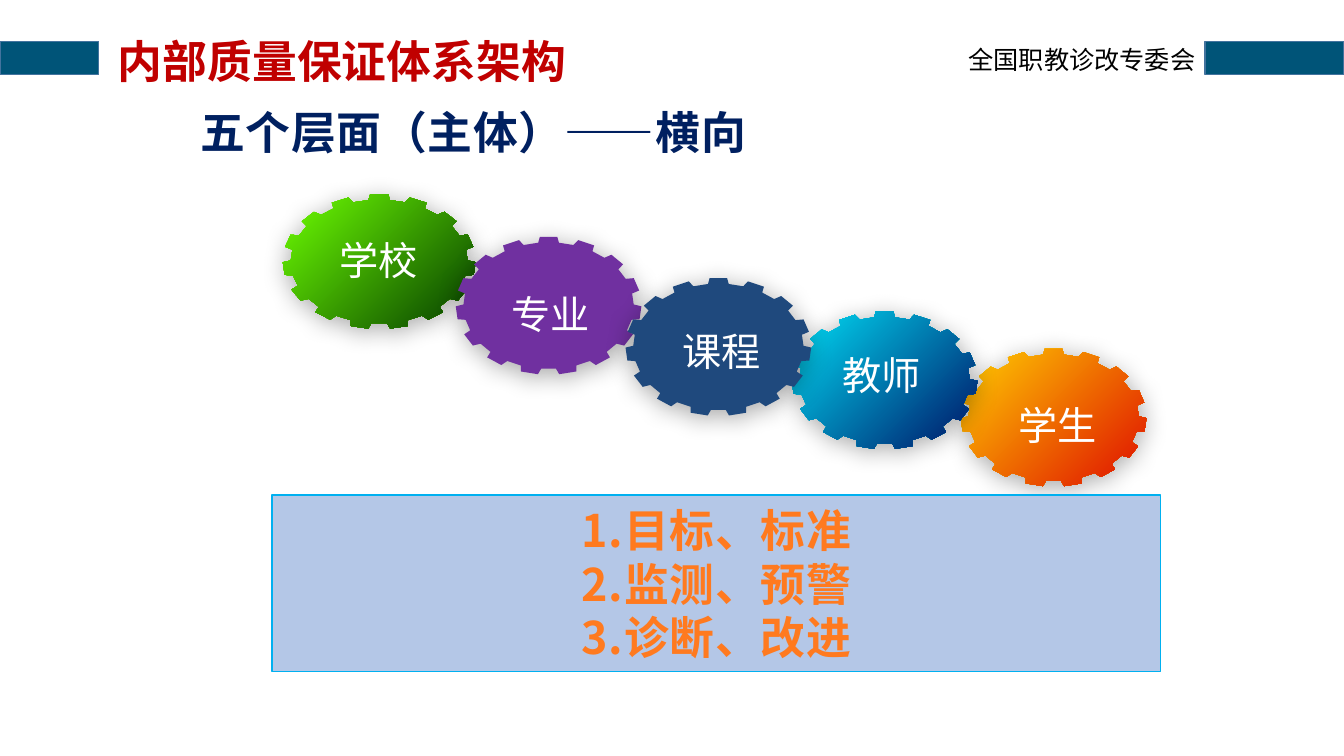
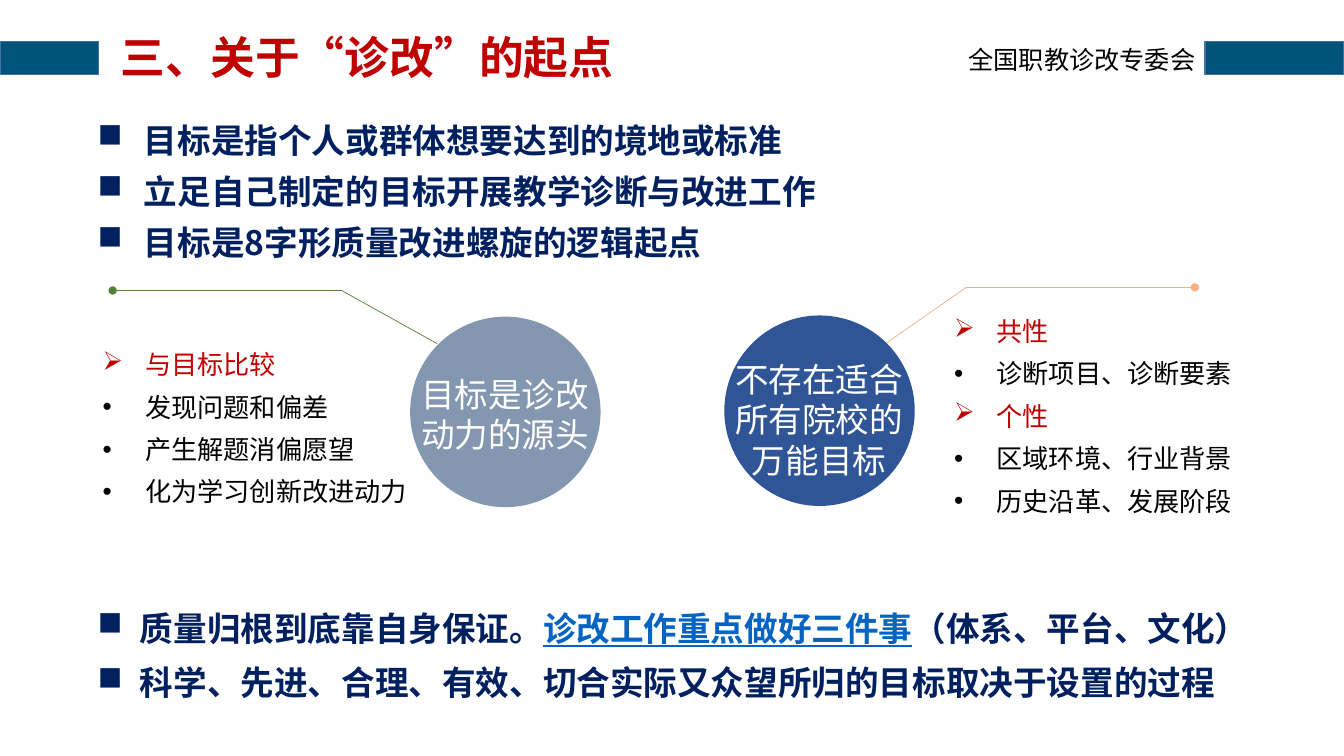
from math import cos, radians, sin

from lxml import etree
from pptx import Presentation
from pptx import util as u
from pptx.dml.color import RGBColor
from pptx.enum import shapes, text
from pptx.oxml.ns import qn


class Theme:
    font, label_font = "Noto Sans CJK SC", "Calibri"
    band, band_edge = "005478", "43739E"
    title, navy, black, white, link = "C00000", "002060", "000000", "FFFFFF", "0563C1"
    panel, panel_edge, panel_text = "B4C7E7", "00B0F0", "FF7A1F"
    left_topic, right_topic = "8497B0", "2F5597"
    left_line, right_line = "548235", "F4B183"
    heading, gear_label, body, point, header = 32, 28, 24, 18.7, 18


WIDE_INSETS = dict(margin_left=u.Cm(0.33), margin_right=u.Cm(0.33),
                   margin_top=u.Cm(0.18), margin_bottom=u.Cm(0.18))
FLUSH_LEFT = dict(margin_left=0, word_wrap=True)
CENTER = dict(alignment=text.PP_ALIGN.CENTER)
BULLET_FONTS = {"n": "Wingdings", "Ø": "Wingdings", "•": "Arial"}
rgb = RGBColor.from_string


def write(shape, lines, size, color, bold=False, font=Theme.font, frame=None,
          para=None, gap=0, indent=0, tracking=0):
    """Fill a shape; a line is (bullet, run, ...), a run is text or (text, font values)."""
    text_frame = shape.text_frame
    for name, value in (frame or {}).items():
        setattr(text_frame, name, value)
    for index, (bullet, *runs) in enumerate(lines):
        paragraph = text_frame.add_paragraph() if index else text_frame.paragraphs[0]
        for name, value in (para or {}).items():
            setattr(paragraph, name, value)
        if index and gap:
            paragraph.space_before = u.Pt(gap)
        if bullet:
            properties = paragraph._p.get_or_add_pPr()
            properties.set("marL", str(u.Cm(indent)))
            properties.set("indent", str(-u.Cm(indent)))
            etree.SubElement(properties, qn("a:buFont"), typeface=BULLET_FONTS[bullet])
            etree.SubElement(properties, qn("a:buChar"), char=bullet)
        for part in runs:
            words, changes = (part, {}) if isinstance(part, str) else part
            values = dict(size=u.Pt(size), bold=bold, name=font, color=color) | changes
            run = paragraph.add_run()
            run.text = words
            run.font.color.rgb = rgb(values.pop("color"))
            for name, value in values.items():
                setattr(run.font, name, value)
            run_properties = run.font._element
            run_properties.set("lang", "zh-CN")
            if tracking:
                run_properties.set("spc", str(tracking))
            east_asian = etree.Element(qn("a:ea"), typeface=Theme.font)
            run_properties.find(qn("a:latin")).addnext(east_asian)


def paint(shape, fill, edge=None):
    """Solid fill for one colour, diagonal gradient for a pair; no inherited shadow."""
    shape.shadow.inherit = False
    if isinstance(fill, str):
        shape.fill.solid()
        shape.fill.fore_color.rgb = rgb(fill)
    else:
        shape.fill.gradient()
        shape.fill.gradient_angle = 315
        for stop, position, color in zip(shape.fill.gradient_stops, (0, 0.9), fill):
            stop.position = position
            stop.color.rgb = rgb(color)
    if edge:
        shape.line.color.rgb = rgb(edge)
        shape.line.width = u.Pt(1)
    else:
        shape.line.fill.background()


deck = Presentation()
deck.slide_width, deck.slide_height = u.Cm(33.88), u.Cm(19.05)
layout = deck.slide_layouts[5]
structure, origin = [deck.slides.add_slide(layout) for _ in range(2)]

# Bands and header are built on a slide, then moved to the layout both slides share
shared = []
for left, width in ((0, 2.49), (30.38, 3.5)):
    band = structure.shapes.add_shape(shapes.MSO_SHAPE.RECTANGLE, u.Cm(left), u.Cm(1.04),
                                      u.Cm(width), u.Cm(0.84))
    paint(band, Theme.band, Theme.band_edge)
    shared.append(band)
header = structure.shapes.add_textbox(u.Cm(23.93), u.Cm(0.99), u.Cm(6.45), u.Cm(1.02))
write(header, [("", "全国职教诊改专委会")], Theme.header, Theme.black,
      frame=dict(word_wrap=True), para=dict(alignment=text.PP_ALIGN.RIGHT))
shared.append(header)
for number, shape in enumerate(shared, 101):
    shape._element.nvSpPr.cNvPr.set("id", str(number))
    layout.shapes._spTree.append(shape._element)

titles = [
    (structure, "内部质量保证体系架构", (2.72, 0.69, 16.81, 1.83)),
    (origin, "三、关于“诊改”的起点", (2.79, 0.51, 16.38, 2.01)),
]
for slide, words, box in titles:
    title = slide.shapes.title
    for name, value in zip(("left", "top", "width", "height"), box):
        setattr(title, name, u.Cm(value))
    write(title, [("", words)], Theme.heading, Theme.title, bold=True,
          frame=dict(vertical_anchor=text.MSO_ANCHOR.MIDDLE, word_wrap=True,
                     auto_size=text.MSO_AUTO_SIZE.NONE),
          para=dict(alignment=text.PP_ALIGN.LEFT, line_spacing=0.9))

# Slide 1: five levels as a chain of gears
subtitle = structure.shapes.add_textbox(u.Cm(4.72), u.Cm(2.46), u.Cm(14.63), u.Cm(1.7))
write(subtitle, [("", "五个层面（主体）——横向")], Theme.heading, Theme.navy, bold=True,
      frame=WIDE_INSETS | dict(word_wrap=False), tracking=50)

# Level, gear centre, gear radii, fill, label corner; from back to front
levels = [
    ("学校", (9.56, 6.59), (2.43, 1.7), ("6EFF01", "0F5000"), (8.23, 5.92)),
    ("学生", (26.56, 10.52), (2.34, 1.74), ("FFCF01", "E22000"), (25.35, 10.06)),
    ("教师", (22.3, 9.58), (2.34, 1.74), ("00DFF6", "002774"), (20.9, 8.81)),
    ("专业", (13.83, 7.7), (2.34, 1.74), "7030A0", (12.57, 7.26)),
    ("课程", (18.11, 8.74), (2.34, 1.74), "1F497D", (16.87, 8.2)),
]
TEETH = 15
TOOTH = ((-7, 0.917), (-5.4, 1), (5.4, 1), (7, 0.917))  # degrees off its axis, reach
gear_outline = [(radians(360 / TEETH * tooth + offset), reach)
                for tooth in range(TEETH) for offset, reach in TOOTH]
for _, (x, y), (rx, ry), fill, _ in levels:
    points = [(u.Cm(x + rx * reach * sin(angle)), u.Cm(y - ry * reach * cos(angle)))
              for angle, reach in gear_outline]
    outline = structure.shapes.build_freeform(*points[0])
    outline.add_line_segments(points[1:], close=True)
    gear = outline.convert_to_shape()
    paint(gear, fill)
    effects = gear._element.spPr.find(qn("a:effectLst"))
    shadow = etree.SubElement(effects, qn("a:outerShdw"), blurRad=str(u.Pt(17.8)),
                              dist=str(u.Pt(3)), dir=str(87 * 60000), rotWithShape="0")
    shade = etree.SubElement(shadow, qn("a:srgbClr"), val=Theme.black)
    etree.SubElement(shade, qn("a:alpha"), val="33000")
for level, _, _, _, (left, top) in levels:
    label = structure.shapes.add_textbox(u.Cm(left), u.Cm(top), u.Cm(2.67), u.Cm(1.42))
    write(label, [("", level)], Theme.gear_label, Theme.white, font=Theme.label_font,
          frame=WIDE_INSETS | dict(word_wrap=False), para=dict(line_spacing=0.9))

tasks = structure.shapes.add_shape(shapes.MSO_SHAPE.RECTANGLE, u.Cm(6.86), u.Cm(12.47),
                                   u.Cm(22.4), u.Cm(4.45))
paint(tasks, Theme.panel, Theme.panel_edge)
write(tasks, [("", "1.目标、标准"), ("", "2.监测、预警"), ("", "3.诊断、改进")],
      Theme.heading, Theme.panel_text, bold=True, frame=WIDE_INSETS, para=CENTER, tracking=50)

# Slide 2: statements, two topics with their points, conclusions
statements = origin.shapes.add_textbox(u.Cm(2.46), u.Cm(2.79), u.Cm(27.84), u.Cm(4.06))
write(statements, [("n", "目标是指个人或群体想要达到的境地或标准"),
                   ("n", "立足自己制定的目标开展教学诊断与改进工作"),
                   ("n", "目标是8字形质量改进螺旋的逻辑起点")],
      Theme.body, Theme.navy, bold=True, frame=FLUSH_LEFT,
      para=dict(line_spacing=1.1), gap=4.8, indent=1.17)

# Circle corner, fill, caption top, caption height, caption
topics = [
    ((10.34, 7.98), Theme.left_topic, 9.3, 2.31, ("目标是诊改", "动力的源头")),
    ((18.26, 7.95), Theme.right_topic, 8.92, 3.33, ("不存在适合", "所有院校的", "万能目标")),
]
for (left, top), fill, caption_top, caption_height, words in topics:
    circle = origin.shapes.add_shape(shapes.MSO_SHAPE.FLOWCHART_CONNECTOR, u.Cm(left),
                                     u.Cm(top), u.Cm(4.8), u.Cm(4.8))
    paint(circle, fill)
    caption = origin.shapes.add_textbox(u.Cm(left), u.Cm(caption_top), u.Cm(4.78),
                                        u.Cm(caption_height))
    write(caption, [("", line) for line in words], Theme.body, Theme.white,
          frame=dict(word_wrap=False), para=CENTER)

# Each leader bends once: a dotted end outwards, a plain end at the circle
leaders = [
    ((8.61, 7.32), (2.84, 7.32), (11.02, 8.66), Theme.left_line),
    ((24.36, 7.24), (30.12, 7.24), (22.35, 8.64), Theme.right_line),
]
for bend, dot, circle_edge, color in leaders:
    for end in (dot, circle_edge):
        leader = origin.shapes.add_connector(shapes.MSO_CONNECTOR.STRAIGHT,
                                             *(u.Cm(value) for value in bend + end))
        leader.line.color.rgb = rgb(color)
        leader.line.width = u.Pt(0.5)
        if end == dot:
            etree.SubElement(leader.line._get_or_add_ln(), qn("a:tailEnd"), type="oval")
        etree.SubElement(leader._element.spPr, qn("a:effectLst"))

red = dict(color=Theme.title)
point_lists = [
    ((2.34, 8.38, 8.74, 4.57),
     [("Ø", ("与目标比较", red)), ("•", "发现问题和偏差"),
      ("•", "产生解题消偏愿望"), ("•", "化为学习创新改进动力")]),
    ((23.8, 7.54, 10.06, 5.64),
     [("Ø", ("共性", red)), ("•", "诊断项目、诊断要素"), ("Ø", ("个性", red)),
      ("•", "区域环境、行业背景"), ("•", "历史沿革、发展阶段")]),
]
for box, lines in point_lists:
    point_list = origin.shapes.add_textbox(*(u.Cm(value) for value in box))
    write(point_list, lines, Theme.point, Theme.black, frame=dict(word_wrap=True),
          para=dict(line_spacing=1.35), indent=1.07)

conclusions = origin.shapes.add_textbox(u.Cm(2.46), u.Cm(14.83), u.Cm(29.74), u.Cm(3.02))
emphasis = dict(color=Theme.link, underline=True)
write(conclusions,
      [("n", "质量归根到底靠自身保证。", ("诊改工作重点做好三件事", emphasis),
        "（体系、平台、文化）"),
       ("n", "科学、先进、合理、有效、切合实际又众望所归的目标取决于设置的过程")],
      Theme.body, Theme.navy, bold=True, frame=FLUSH_LEFT,
      para=dict(line_spacing=1.35), indent=1.07)

deck.save("out.pptx")
